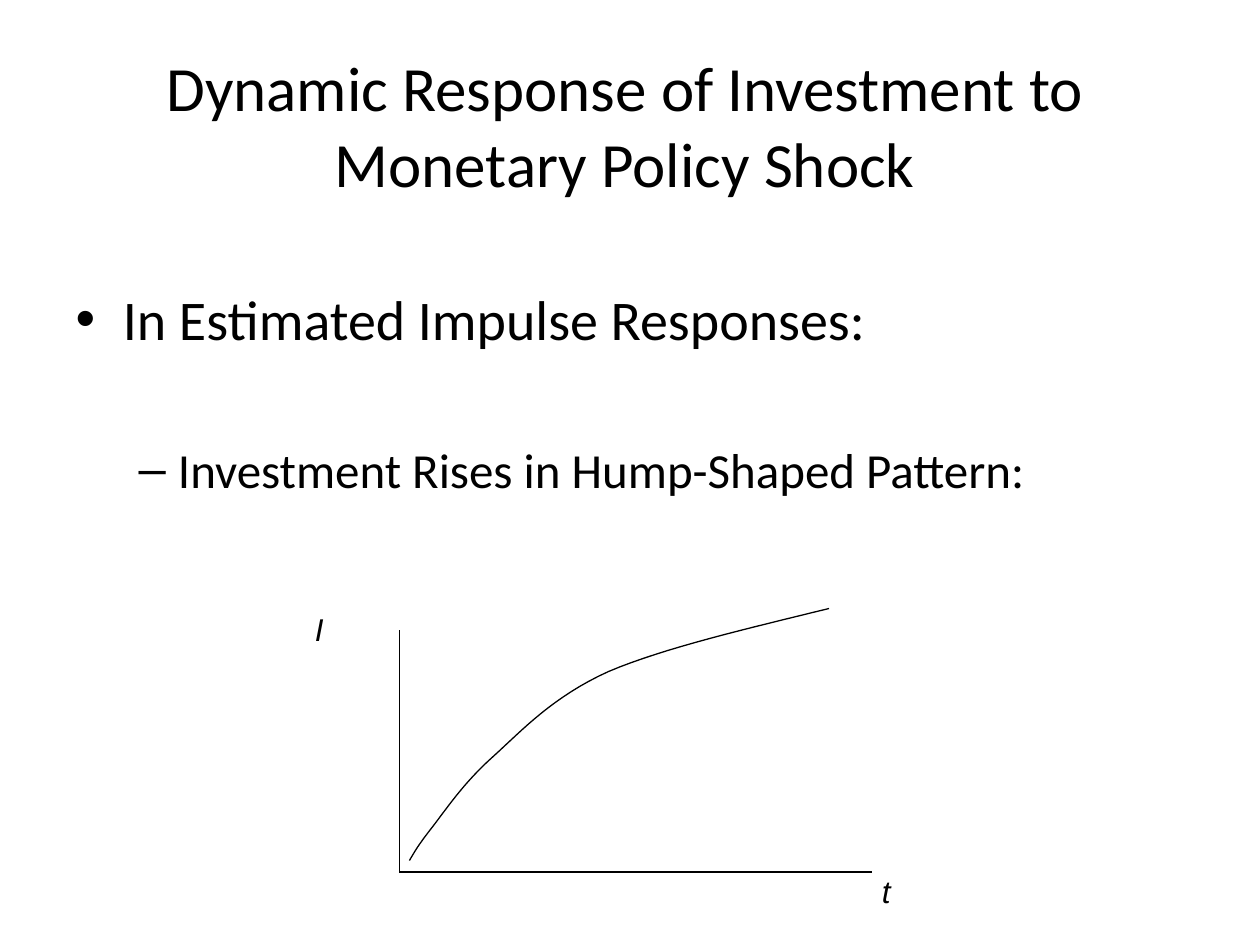
from pptx import Presentation
from pptx.dml.color import RGBColor
from pptx.enum import shapes, text
from pptx.oxml.ns import qn
from pptx.util import Inches, Pt
from lxml import etree

BLACK = "000000"
TITLE = "Dynamic Response of Investment to Monetary Policy Shock"
LIST = [
    ("In Estimated Impulse Responses:", 0, 32, 0),
    ("Investment Rises in Hump-Shaped Pattern:", 1, 28, 50),
]
AXES = [((3.17, 5), (3.17, 6.92)), ((3.17, 6.92), (6.92, 6.92))]
LABELS = [("I", 2.4, 4.79), ("t", 6.9, 6.87)]
START = (3.25, 6.83)
CURVES = [
    ((3.28, 6.78), (3.31, 6.72), (3.42, 6.58)),
    ((3.53, 6.44), (3.68, 6.21), (3.92, 6)),
    ((4.15, 5.79), (4.39, 5.53), (4.83, 5.33)),
    ((5.28, 5.14), (5.93, 4.99), (6.58, 4.83)),
]
STEPS = 16


def color(code):
    return RGBColor.from_string(code)


def place(shape, *box):
    shape.left, shape.top, shape.width, shape.height = map(Inches, box)


def style(para, size, face="Calibri"):
    para.font.size = Pt(size)
    para.font.name = face
    para.font.color.rgb = color(BLACK)


def stroke(shape):
    shape.line.color.rgb = color(BLACK)
    shape.line.width = Pt(0.75)


def trace():
    start = START
    for curve in CURVES:
        knots = (start, *curve)
        for step in range(1, STEPS + 1):
            t = step / STEPS
            s = 1 - t
            mix = (s**3, 3 * s * s * t, 3 * s * t * t, t**3)
            yield tuple(
                Inches(sum(m * k[axis] for m, k in zip(mix, knots)))
                for axis in (0, 1))
        start = curve[-1]


deck = Presentation()
deck.slide_width, deck.slide_height = Inches(10), Inches(7.5)
slide = deck.slides.add_slide(deck.slide_layouts[1])

title = slide.shapes.title
place(title, 0.42, 0.3, 9.08, 1.37)
title.text_frame.text = TITLE
style(title.text_frame.paragraphs[0], 36)

body = slide.placeholders[1]
place(body, 0.5, 1.58, 9, 5.67)
frame = body.text_frame
frame.margin_top = Inches(0.68)
for i, (words, level, size, gap) in enumerate(LIST):
    para = frame.add_paragraph() if i else frame.paragraphs[0]
    para.text = words
    para.level = level
    para.space_before = Pt(gap)
    style(para, size)

for head, tail in AXES:
    axis = slide.shapes.add_connector(
        shapes.MSO_CONNECTOR.STRAIGHT, *map(Inches, head + tail))
    stroke(axis)
    etree.SubElement(axis._element.spPr, qn("a:effectLst"))

for words, left, top in LABELS:
    label = slide.shapes.add_textbox(*map(Inches, (left, top, 0.27, 0.4)))
    label.text_frame.word_wrap = False
    label.text_frame.auto_size = text.MSO_AUTO_SIZE.SHAPE_TO_FIT_TEXT
    para = label.text_frame.paragraphs[0]
    para.text = words
    style(para, 18, "Arial")
    para.font.italic = True

pen = slide.shapes.build_freeform(*map(Inches, START))
pen.add_line_segments(list(trace()), close=False)
hump = pen.convert_to_shape()
hump.shadow.inherit = False
hump.fill.background()
stroke(hump)

deck.save("out.pptx")
